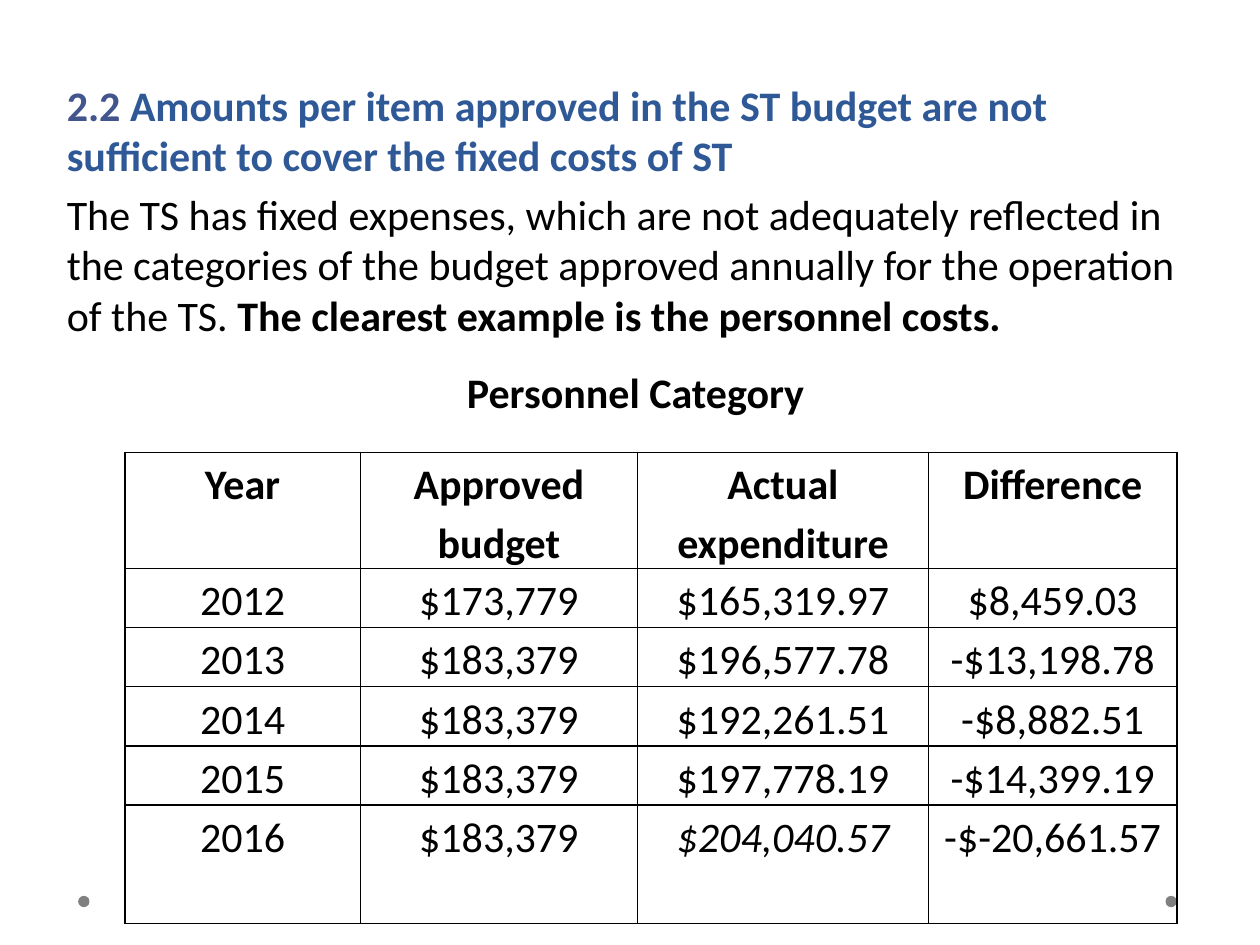
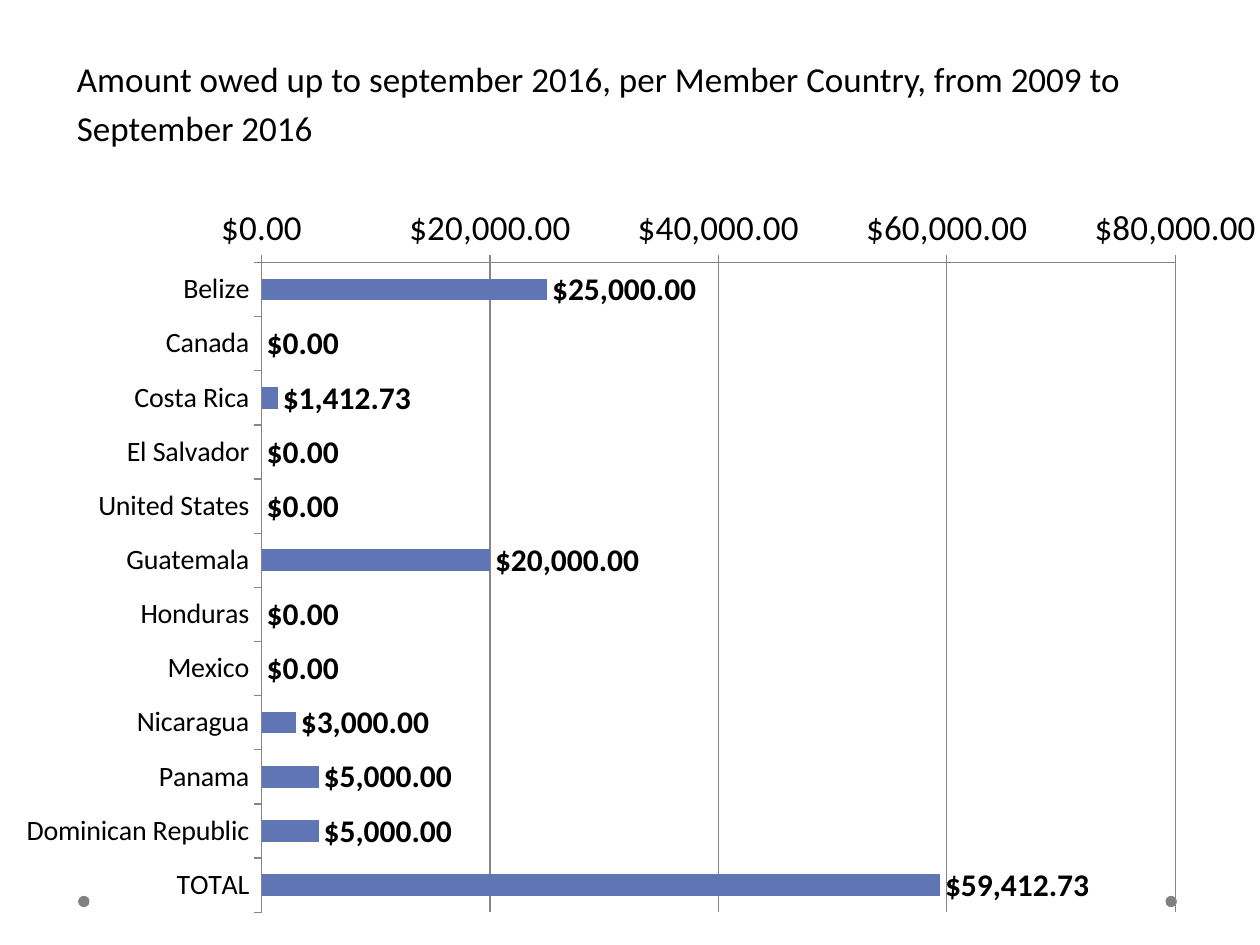
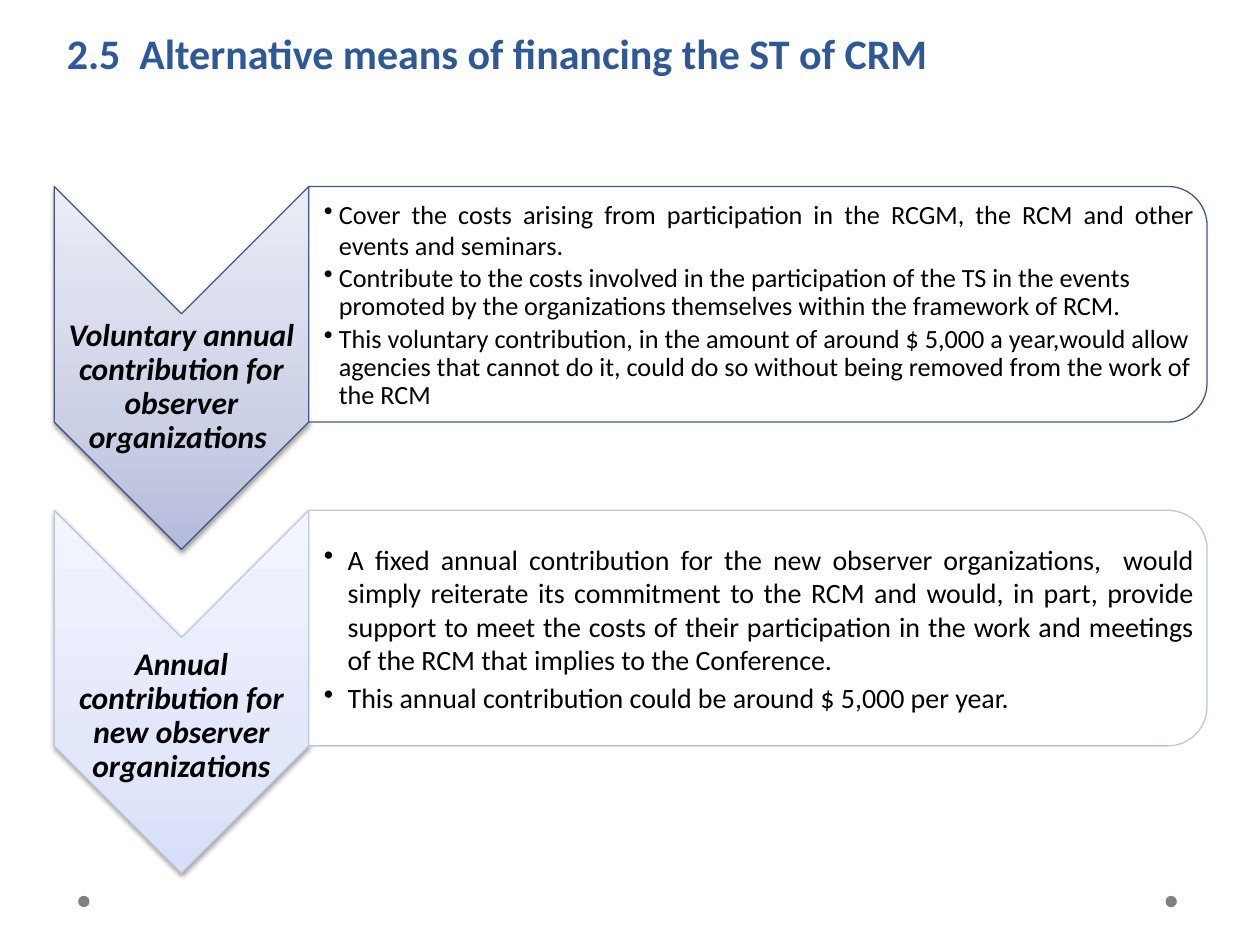
from copy import deepcopy

from pptx import Presentation
from pptx import util as u
from pptx.chart import data as chart_data
from pptx.dml.color import RGBColor
from pptx.enum import chart as charts, shapes, text
from pptx.oxml import parse_xml
from pptx.oxml.ns import nsdecls, qn

BLACK = RGBColor(0, 0, 0)
WHITE = RGBColor(255, 255, 255)
GRAY = RGBColor(0x80, 0x80, 0x80)
AXIS_GRAY = RGBColor(0x86, 0x86, 0x86)
NAVY = RGBColor(0x2F, 0x58, 0x97)
SLATE = RGBColor(0x42, 0x56, 0x8D)
BAR_BLUE = RGBColor(0x60, 0x76, 0xB4)
DEEP_EDGE = RGBColor(0x47, 0x57, 0x85)
PALE_EDGE = RGBColor(0xC1, 0xC7, 0xDB)
DEEP_SHADES = ["B4BBDB", "CBD0E5", "EBEDF6"]
PALE_SHADES = ["D8DEF9", "E3E7FA", "F3F5FE"]
SHADE_STOPS = [0, 0.35, 1]
FONT = "Calibri"
CHART_FONT = "TeX Gyre Pagella"
DOLLARS = "[$$-409]#,##0.00"
LEFT, CENTER, JUSTIFY = text.PP_ALIGN.LEFT, text.PP_ALIGN.CENTER, text.PP_ALIGN.JUSTIFY
MIDDLE = text.MSO_ANCHOR.MIDDLE

BUDGET_TEXT = [
    [("2.2 ", dict(bold=True, color=SLATE)),
     ("Amounts per item approved in the ST budget are not sufficient to cover the fixed costs of ST",
      dict(bold=True, color=NAVY))],
    [("The TS has fixed expenses, which are not adequately reflected in the categories of the budget "
      "approved annually for the operation of the TS. ", {}),
     ("The clearest example is the personnel costs.", dict(bold=True))],
]
TABLE_TITLE = "Personnel Category"
COSTS = [
    ("Year", "Approved budget", "Actual expenditure", "Difference"),
    ("2012", "$173,779", "$165,319.97", "$8,459.03"),
    ("2013", "$183,379", "$196,577.78", "-$13,198.78"),
    ("2014", "$183,379", "$192,261.51", "-$8,882.51"),
    ("2015", "$183,379", "$197,778.19", "-$14,399.19"),
    ("2016", "$183,379", "$204,040.57", "-$-20,661.57"),
]
ITALIC_COST = "$204,040.57"
COLUMN_WIDTHS = [1.87, 2.2, 2.31, 1.97]
ROW_HEIGHTS = [0.77] + [0.47] * 4 + [0.94]

DEBT_TEXT = "Amount owed up to september 2016, per Member Country, from 2009 to September 2016"
DEBTS = {
    "Belize": 25000, "Canada": 0, "Costa Rica": 1412.73, "El Salvador": 0,
    "United States": 0, "Guatemala": 20000, "Honduras": 0, "Mexico": 0,
    "Nicaragua": 3000, "Panama": 5000, "Dominican Republic": 5000, "TOTAL": 59412.73,
}
PLOT = dict(x=0.211, y=0.163, w=0.672, h=0.829)

FINANCE_TITLE = "2.5  Alternative means of financing the ST of CRM"
OPTIONS = [
    dict(
        label="Voluntary annual contribution for observer organizations ",
        label_drop=0.34, edge=DEEP_EDGE, shades=DEEP_SHADES, size=15, indent=0.12,
        bullets=[
            ("Cover the costs arising from participation in the RCGM, the RCM and other events and seminars.",
             dict(align=JUSTIFY)),
            ("Contribute to the costs involved in the participation of the TS in the events promoted by the "
             "organizations themselves within the framework of RCM.", dict(spacing=0.9)),
            ("This voluntary contribution, in the amount of around $ 5,000 a year,would allow agencies that "
             "cannot do it, could do so without being removed from the work of the RCM", dict(spacing=0.9)),
        ]),
    dict(
        label="Annual contribution for new observer organizations",
        label_drop=0.42, edge=PALE_EDGE, shades=PALE_SHADES, size=16, indent=0.19,
        bullets=[
            ("A fixed annual contribution for the new observer organizations,  would simply reiterate its "
             "commitment to the RCM and would, in part, provide support to meet the costs of their "
             "participation in the work and meetings of the RCM that implies to the Conference. ",
             dict(align=JUSTIFY)),
            ("This annual contribution could be around $ 5,000 per year.", dict(align=JUSTIFY)),
        ]),
]
OPTIONS_LEFT, OPTIONS_TOP, OPTION_PITCH = 0.43, 1.48, 2.57
ARROW_WIDTH, ARROW_HEIGHT = 2.02, 2.88
PANEL_WIDTH, PANEL_HEIGHT = 7.13, 1.87


def inches(*lengths):
    return [u.Inches(length) for length in lengths]


def place(shape, *frame):
    shape.left, shape.top, shape.width, shape.height = inches(*frame)


def set_font(font, size, color=BLACK, bold=False, italic=False, name=FONT):
    font.name, font.size, font.bold, font.italic = name, u.Pt(size), bold, italic
    font.color.rgb = color


def write(para, words, align=LEFT, spacing=None, after=None, **font):
    para.alignment = align
    if spacing:
        para.line_spacing = spacing
    if after is not None:
        para.space_after = u.Pt(after)
    span = para.add_run()
    span.text = words
    set_font(span.font, **font)


def set_bullet(para, indent=0):
    props = para._p.get_or_add_pPr()
    props.set("marL", str(u.Inches(indent)))
    props.set("indent", str(-u.Inches(indent)))
    mark = '<a:buChar %s char="•"/>' if indent else "<a:buNone %s/>"
    props.append(parse_xml(mark % nsdecls("a")))


def next_para(frame, index):
    return frame.add_paragraph() if index else frame.paragraphs[0]


def add_text_box(page, frame, anchor=text.MSO_ANCHOR.TOP, insets=(0.1, 0.05, 0.1, 0.05)):
    words = page.shapes.add_textbox(*inches(*frame)).text_frame
    words.word_wrap = True
    words.vertical_anchor = anchor
    words.margin_left, words.margin_top, words.margin_right, words.margin_bottom = inches(*insets)
    return words


def add_preset(page, kind, frame, fill=WHITE, edge=None):
    shape = page.shapes.add_shape(kind, *inches(*frame))
    shape.shadow.inherit = False
    shape.fill.solid()
    shape.fill.fore_color.rgb = fill
    if edge is None:
        shape.line.fill.background()
    else:
        shape.line.color.rgb = edge
        shape.line.width = u.Pt(0.75)
    return shape


def add_turned(page, kind, left, top, width, height, edge):
    frame = (left + (width - height) / 2, top + (height - width) / 2, height, width)
    shape = add_preset(page, kind, frame, edge=edge)
    shape.rotation = 90
    return shape


def add_master_dots(deck, page):
    tree = deck.slide_master.element.find(qn("p:cSld")).find(qn("p:spTree"))
    for left in (9.25, 0.62):
        dot = add_preset(page, shapes.MSO_SHAPE.OVAL, (left, 7.11, 0.09, 0.09), GRAY)
        tree.append(dot.element)


def add_body_page(deck, frame):
    page = deck.slides.add_slide(deck.slide_layouts[1])
    title = page.shapes.title.element
    title.getparent().remove(title)
    body = page.placeholders[1]
    place(body, *frame)
    body.text_frame.auto_size = text.MSO_AUTO_SIZE.NONE
    return page, body.text_frame


def border_cell(cell):
    props = cell._tc.get_or_add_tcPr()
    for index, side in enumerate(("lnL", "lnR", "lnT", "lnB")):
        props.insert(index, parse_xml(
            f'<a:{side} {nsdecls("a")} w="12700"><a:solidFill><a:srgbClr val="{BLACK}"/>'
            f'</a:solidFill></a:{side}>'))


def add_costs_table(page):
    table = page.shapes.add_table(
        len(COSTS), len(COLUMN_WIDTHS),
        *inches(0.99, 3.59, sum(COLUMN_WIDTHS), sum(ROW_HEIGHTS))).table
    table.horz_banding = False
    for column, width in zip(table.columns, COLUMN_WIDTHS):
        column.width = u.Inches(width)
    for index, (row, height, values) in enumerate(zip(table.rows, ROW_HEIGHTS, COSTS)):
        row.height = u.Inches(height)
        for cell, value in zip(row.cells, values):
            cell.fill.background()
            cell.margin_left = cell.margin_right = u.Inches(0.07)
            cell.margin_top = cell.margin_bottom = 0
            write(cell.text_frame.paragraphs[0], value, align=CENTER, spacing=1.15,
                  size=24, bold=index == 0, italic=value == ITALIC_COST)
            border_cell(cell)


def build_budget(deck):
    page, body = add_body_page(deck, (0.43, 0.58, 9, 5.86))
    add_master_dots(deck, page)
    for index, spans in enumerate(BUDGET_TEXT):
        para = next_para(body, index)
        for words, font in spans:
            write(para, words, size=24, **font)
        set_bullet(para)
    caption = add_text_box(page, (1.46, 2.86, 7.17, 0.5))
    write(caption.paragraphs[0], TABLE_TITLE, align=CENTER, size=24, bold=True)
    add_costs_table(page)


def fix_plot(chart):
    area = chart.element.find(qn("c:chart")).find(qn("c:plotArea"))
    for layout in area.findall(qn("c:layout")):
        area.remove(layout)
    sizes = "".join(f'<c:{key} val="{share}"/>' for key, share in PLOT.items())
    area.insert(0, parse_xml(
        f'<c:layout {nsdecls("c")}><c:manualLayout><c:layoutTarget val="inner"/>'
        f'<c:xMode val="edge"/><c:yMode val="edge"/>{sizes}</c:manualLayout></c:layout>'))


def build_debts(deck):
    page, body = add_body_page(deck, (0.51, 0.36, 9, 4.95))
    write(body.paragraphs[0], DEBT_TEXT, spacing=1.15, size=20)
    set_bullet(body.paragraphs[0])

    source = chart_data.CategoryChartData(number_format=DOLLARS)
    source.categories = list(DEBTS)
    source.add_series("Series 1", list(DEBTS.values()))
    chart = page.shapes.add_chart(charts.XL_CHART_TYPE.BAR_CLUSTERED,
                                  *inches(-0.2, 1.07, 10.79, 6.22), source).chart
    chart.has_title = chart.has_legend = False
    set_font(chart.font, 10, name=CHART_FONT)
    fix_plot(chart)

    for axis, size in ((chart.category_axis, 16), (chart.value_axis, 20)):
        set_font(axis.tick_labels.font, size)
        axis.major_tick_mark = charts.XL_TICK_MARK.OUTSIDE
        axis.minor_tick_mark = charts.XL_TICK_MARK.NONE
        axis.format.line.color.rgb = AXIS_GRAY
    chart.category_axis.reverse_order = True
    chart.category_axis.has_major_gridlines = False
    values = chart.value_axis
    values.minimum_scale, values.maximum_scale, values.major_unit = 0, 80000, 20000
    values.has_major_gridlines = True
    values.major_gridlines.format.line.color.rgb = AXIS_GRAY
    values.tick_labels.number_format = DOLLARS
    values.tick_labels.number_format_is_linked = False

    plot = chart.plots[0]
    plot.gap_width = 150
    plot.vary_by_categories = False
    series = plot.series[0]
    series.invert_if_negative = False
    series.format.fill.solid()
    series.format.fill.fore_color.rgb = BAR_BLUE
    labels = series.data_labels
    labels.show_value = True
    labels.position = charts.XL_LABEL_POSITION.OUTSIDE_END
    labels.number_format = DOLLARS
    labels.number_format_is_linked = False
    set_font(labels.font, 18, bold=True)


def shade(shape, colors):
    shape.fill.gradient()
    shape.fill.gradient_angle = 90
    gradient = shape.element.spPr.find(qn("a:gradFill"))
    gradient.set("rotWithShape", "0")
    stops = gradient.find(qn("a:gsLst"))
    stops.insert(1, deepcopy(stops[0]))
    for stop, position, color in zip(shape.fill.gradient_stops, SHADE_STOPS, colors):
        stop.position = position
        stop.color.rgb = RGBColor.from_string(color)


def add_shadow(shape):
    shape.element.spPr.find(qn("a:effectLst")).append(parse_xml(
        f'<a:outerShdw {nsdecls("a")} blurRad="{u.Pt(3.1)}" dist="{u.Pt(1.6)}" dir="5400000" '
        f'rotWithShape="0"><a:srgbClr val="{BLACK}"><a:alpha val="38000"/></a:srgbClr></a:outerShdw>'))


def add_option(page, top, option):
    arrow = add_turned(page, shapes.MSO_SHAPE.CHEVRON, OPTIONS_LEFT, top,
                       ARROW_WIDTH, ARROW_HEIGHT, option["edge"])
    shade(arrow, option["shades"])
    add_shadow(arrow)
    label = add_text_box(page, (OPTIONS_LEFT, top + 1, ARROW_WIDTH, 0.86), MIDDLE,
                         (0.01, option["label_drop"], 0.01, 0.01))
    write(label.paragraphs[0], option["label"], align=CENTER, spacing=0.9,
          size=18, bold=True, italic=True)

    panel_left = OPTIONS_LEFT + ARROW_WIDTH
    add_turned(page, shapes.MSO_SHAPE.ROUND_2_SAME_RECTANGLE, panel_left, top,
               PANEL_WIDTH, PANEL_HEIGHT, option["edge"])
    details = add_text_box(page, (panel_left, top + 0.09, 7.04, 1.69), MIDDLE,
                           (0.12, 0.01, 0.01, 0.01))
    for index, (words, layout) in enumerate(option["bullets"]):
        para = next_para(details, index)
        write(para, words, size=option["size"], after=0.15 * option["size"], **layout)
        set_bullet(para, option["indent"])


def build_financing(deck):
    page = deck.slides.add_slide(deck.slide_layouts[5])
    title = page.shapes.title
    place(title, OPTIONS_LEFT, -0.27, 9, 1.75)
    title.text_frame.auto_size = text.MSO_AUTO_SIZE.NONE
    title.text_frame.vertical_anchor = MIDDLE
    title.text_frame.margin_bottom = u.Inches(0.42)
    write(title.text_frame.paragraphs[0], FINANCE_TITLE, size=24, bold=True, color=NAVY)
    for index, option in enumerate(OPTIONS):
        add_option(page, OPTIONS_TOP + index * OPTION_PITCH, option)


def main():
    deck = Presentation()
    deck.slide_width, deck.slide_height = inches(10, 7.5)
    build_budget(deck)
    build_debts(deck)
    build_financing(deck)
    deck.save("out.pptx")


if __name__ == "__main__":
    main()
